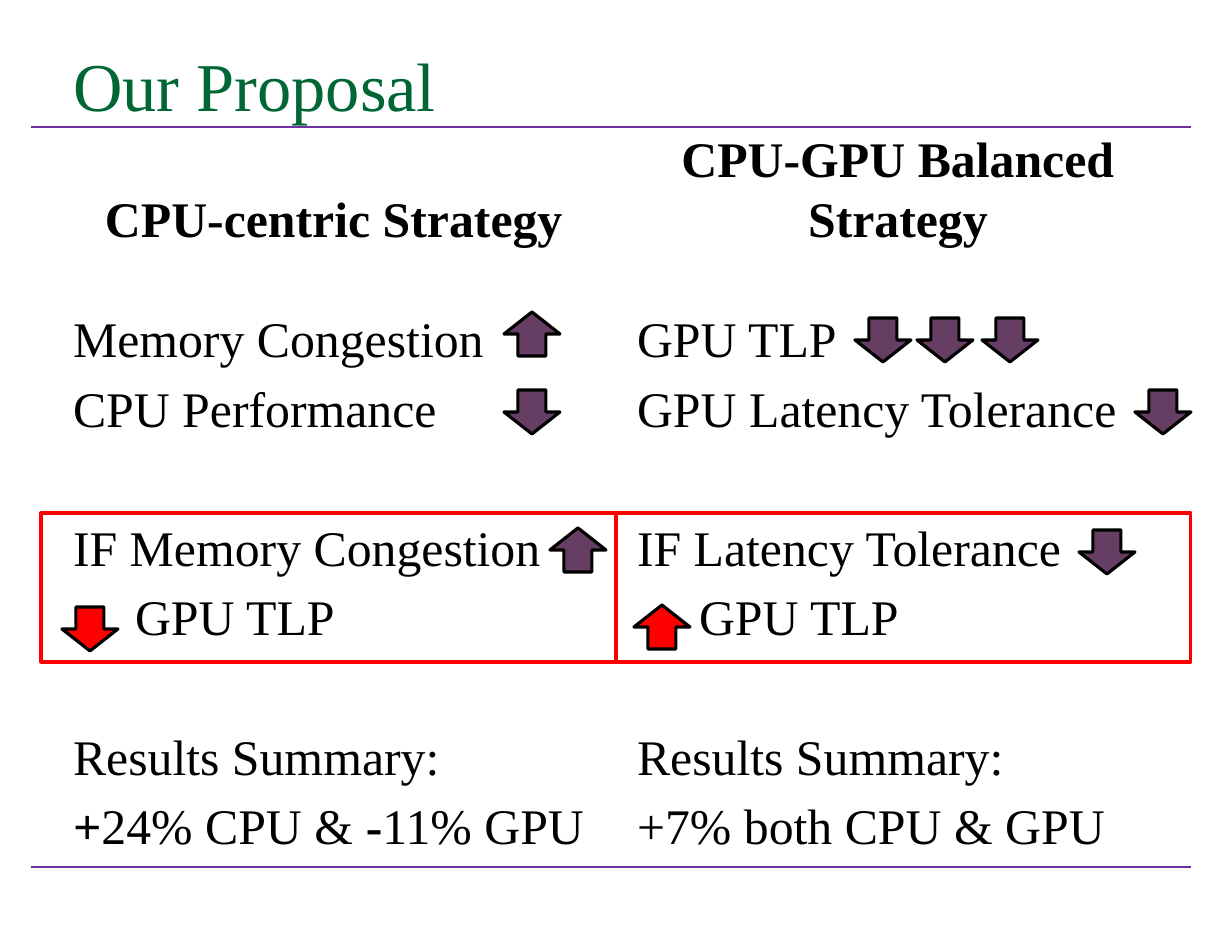
from pptx import Presentation
from pptx.dml.color import RGBColor
from pptx.enum.shapes import MSO_CONNECTOR, MSO_SHAPE
from pptx.enum.text import MSO_ANCHOR, PP_ALIGN
from pptx.oxml.ns import qn
from pptx.util import Pt
from lxml.etree import SubElement

PX = 914400 / 112
FONT = "Times New Roman"
GREEN, BLACK, PURPLE, PLUM, RED = "006633", "000000", "7030A0", "663D63", "FF0000"
SPACE, GAP = 6.4, 51.1  # points before a line, and before a new group
INDENT = 62
ARROW_W, ARROW_H = 56, 44
ARROWS = {"up": MSO_SHAPE.UP_ARROW, "down": MSO_SHAPE.DOWN_ARROW}

# Groups of lines; a line is a list of (text, bold) runs.
# Arrows are x, y, direction, colour, measured from the column's corner.
COLUMNS = [
    {
        "heading": "CPU-centric Strategy",
        "groups": [
            [[("Memory Congestion", False)], [("CPU Performance", False)]],
            [[("IF Memory Congestion", False)], [("GPU TLP", False)]],
            [[("Results Summary:", False)],
             [("+", True), ("24% CPU & ", False), ("-", True), ("11% GPU", False)]],
        ],
        "arrows": [(442, 170, "up", PLUM), (442, 248, "down", PLUM),
                   (488, 386, "up", PLUM), (0, 465, "down", RED)],
        "frame_x": -21,
    },
    {
        "heading": "CPU-GPU Balanced Strategy",
        "groups": [
            [[("GPU TLP", False)], [("GPU Latency Tolerance", False)]],
            [[("IF Latency Tolerance", False)], [("GPU TLP", False)]],
            [[("Results Summary:", False)], [("+7% both CPU & GPU", False)]],
        ],
        "arrows": [(229, 176, "down", PLUM), (291, 176, "down", PLUM),
                   (356, 176, "down", PLUM), (509, 248, "down", PLUM),
                   (453, 388, "down", PLUM), (8, 463, "up", RED)],
        "frame_x": -10,
    },
]


def px(*lengths):
    return [round(length * PX) for length in lengths]


def paint(color_format, hex_color):
    color_format.rgb = RGBColor.from_string(hex_color)


def apply(target, values):
    for name, value in values.items():
        setattr(target, name, value)


def add_run(paragraph, text, size, color, bold=False):
    run = paragraph.add_run()
    run.text = text
    apply(run.font, {"name": FONT, "size": Pt(size), "bold": bold})
    paint(run.font.color, color)


def add_frame(slide, box, anchor=MSO_ANCHOR.TOP):
    frame = slide.shapes.add_textbox(*px(*box)).text_frame
    apply(frame, {"word_wrap": True, "vertical_anchor": anchor})
    return frame


def add_outlined(slide, preset, box, line_color, fill_color=None):
    shape = slide.shapes.add_shape(preset, *px(*box))
    shape.shadow.inherit = False
    if fill_color:
        shape.fill.solid()
        paint(shape.fill.fore_color, fill_color)
    else:
        shape.fill.background()
    shape.line.width = Pt(2)
    paint(shape.line.color, line_color)


def add_rule(slide, y):
    rule = slide.shapes.add_connector(MSO_CONNECTOR.STRAIGHT, *px(31, y, 1191, y))
    rule.line.width = Pt(1.5)
    paint(rule.line.color, PURPLE)
    SubElement(rule._element.spPr, qn("a:effectLst"))


def add_title(slide, box):
    add_run(add_frame(slide, box).paragraphs[0], "Our Proposal", 44, GREEN)


def add_column(slide, box, column):
    left, top, width, height = box

    # Heading
    heading = add_frame(slide, (left, top, width, 111), MSO_ANCHOR.BOTTOM).paragraphs[0]
    heading.alignment = PP_ALIGN.CENTER
    add_run(heading, column["heading"], 32, BLACK, True)

    # Statements; the action that follows from the condition is indented
    body = add_frame(slide, (left, top + 160, width, height - 160))
    for group_no, group in enumerate(column["groups"]):
        for line_no, line in enumerate(group):
            first = group_no == line_no == 0
            paragraph = body.paragraphs[0] if first else body.add_paragraph()
            new_group = group_no > 0 and line_no == 0
            paragraph.space_before = Pt(GAP if new_group else SPACE)
            if (group_no, line_no) == (1, 1):
                paragraph._p.get_or_add_pPr().set("marL", str(px(INDENT)[0]))
            for text, bold in line:
                add_run(paragraph, text, 32, BLACK, bold)

    # Trend arrows
    for x, y, direction, color in column["arrows"]:
        add_outlined(slide, ARROWS[direction],
                     (left + x, top + y, ARROW_W, ARROW_H), BLACK, color)

    # Frame around the rule of the strategy
    add_outlined(slide, MSO_SHAPE.RECTANGLE,
                 (left + column["frame_x"], top + 371, 575, 149), RED)


def main():
    deck = Presentation()
    deck.slide_width, deck.slide_height = px(1232, 952)
    slide = deck.slides.add_slide(deck.slide_layouts[6])
    for y in (867, 127):
        add_rule(slide, y)
    add_title(slide, (62, 38, 1109, 159))
    for number, column in enumerate(COLUMNS):
        add_column(slide, (62 + 564 * number, 142, 544, 709), column)
    deck.save("out.pptx")


if __name__ == "__main__":
    main()
